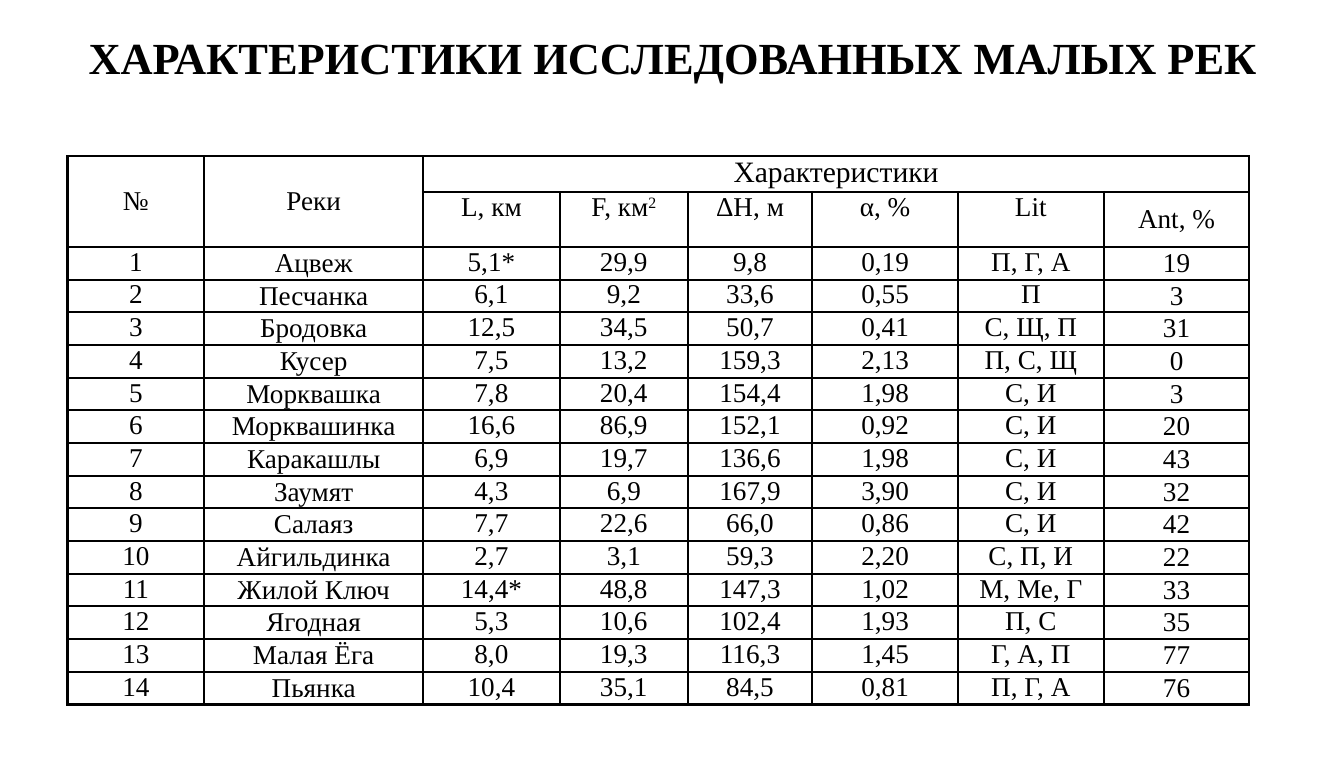
from lxml import etree
from pptx import Presentation
from pptx.dml.color import RGBColor
from pptx.enum import text
from pptx.oxml import ns
from pptx.util import Inches, Pt

BLACK = RGBColor(0, 0, 0)
FONT = "Times New Roman"
COLUMN_WIDTHS = [0.77, 1.23, 0.77, 0.72, 0.7, 0.82, 0.82, 0.82]
GROUP_HEADINGS = ["№", "Реки", "Характеристики"]
MEASURES = ["", "", "L, км", "F, км", "ΔH, м", "α, %", "Lit", "Ant, %"]
RIVERS = [
    ["Ацвеж", "5,1*", "29,9", "9,8", "0,19", "П, Г, А", "19"],
    ["Песчанка", "6,1", "9,2", "33,6", "0,55", "П", "3"],
    ["Бродовка", "12,5", "34,5", "50,7", "0,41", "С, Щ, П", "31"],
    ["Кусер", "7,5", "13,2", "159,3", "2,13", "П, С, Щ", "0"],
    ["Морквашка", "7,8", "20,4", "154,4", "1,98", "С, И", "3"],
    ["Морквашинка", "16,6", "86,9", "152,1", "0,92", "С, И", "20"],
    ["Каракашлы", "6,9", "19,7", "136,6", "1,98", "С, И", "43"],
    ["Заумят", "4,3", "6,9", "167,9", "3,90", "С, И", "32"],
    ["Салаяз", "7,7", "22,6", "66,0", "0,86", "С, И", "42"],
    ["Айгильдинка", "2,7", "3,1", "59,3", "2,20", "С, П, И", "22"],
    ["Жилой Ключ", "14,4*", "48,8", "147,3", "1,02", "М, Ме, Г", "33"],
    ["Ягодная", "5,3", "10,6", "102,4", "1,93", "П, С", "35"],
    ["Малая Ёга", "8,0", "19,3", "116,3", "1,45", "Г, А, П", "77"],
    ["Пьянка", "10,4", "35,1", "84,5", "0,81", "П, Г, А", "76"],
]


def add_centred_run(paragraph, words, size, bold=False):
    paragraph.alignment = text.PP_ALIGN.CENTER
    run = paragraph.add_run()
    run.text = words
    for name, value in dict(name=FONT, size=Pt(size), bold=bold).items():
        setattr(run.font, name, value)
    run.font.color.rgb = BLACK
    return run


def outline_cell(cell):
    """Draw a thin black line on all four sides, with no fill inside."""
    cell.fill.background()
    properties = cell._tc.get_or_add_tcPr()
    for position, side in enumerate(["lnL", "lnR", "lnT", "lnB"]):
        line = etree.Element(ns.qn(f"a:{side}"), w=str(Pt(1)))
        fill = etree.SubElement(line, ns.qn("a:solidFill"))
        etree.SubElement(fill, ns.qn("a:srgbClr"), val=str(BLACK))
        properties.insert(position, line)


presentation = Presentation()
presentation.slide_width = Inches(7.56)
presentation.slide_height = Inches(4.26)
slide = presentation.slides.add_slide(presentation.slide_layouts[6])

title = slide.shapes.add_textbox(
    Inches(0.38), Inches(0.17), Inches(6.81), Inches(0.3)).text_frame
title.word_wrap = True
for side in ["left", "right", "top", "bottom"]:
    setattr(title, f"margin_{side}", 0)
add_centred_run(title.paragraphs[0],
                "ХАРАКТЕРИСТИКИ ИССЛЕДОВАННЫХ МАЛЫХ РЕК", 18, bold=True)

rows = [GROUP_HEADINGS + [""] * 5, MEASURES]
rows += [[str(number), *river] for number, river in enumerate(RIVERS, 1)]
rivers_table = slide.shapes.add_table(
    len(rows), len(COLUMN_WIDTHS), Inches(0.38), Inches(0.88),
    Inches(6.65), Inches(3.04)).table
rivers_table.first_row = False
rivers_table.horz_banding = False
for column, width in zip(rivers_table.columns, COLUMN_WIDTHS):
    column.width = Inches(width)
row_heights = [Inches(0.19), Inches(0.31)]
row_heights += [Inches(2.54) // len(RIVERS)] * len(RIVERS)

for r, (row, height) in enumerate(zip(rows, row_heights)):
    rivers_table.rows[r].height = height
    for c, words in enumerate(row):
        cell = rivers_table.cell(r, c)
        cell.margin_left = cell.margin_right = Inches(0.06)
        cell.margin_top = cell.margin_bottom = 0
        outline_cell(cell)
        if c in (1, 7) or (r, c) == (0, 0):
            cell.vertical_anchor = text.MSO_ANCHOR.MIDDLE
        if words:
            add_centred_run(cell.text_frame.paragraphs[0], words,
                            12 if words == "Характеристики" else 11)

area_heading = rivers_table.cell(1, MEASURES.index("F, км")).text_frame
square = add_centred_run(area_heading.paragraphs[0], "2", 11)
square.font._element.set("baseline", "30000")

for c in (0, 1):
    rivers_table.cell(0, c).merge(rivers_table.cell(1, c))
rivers_table.cell(0, 2).merge(rivers_table.cell(0, 7))

presentation.save("out.pptx")
